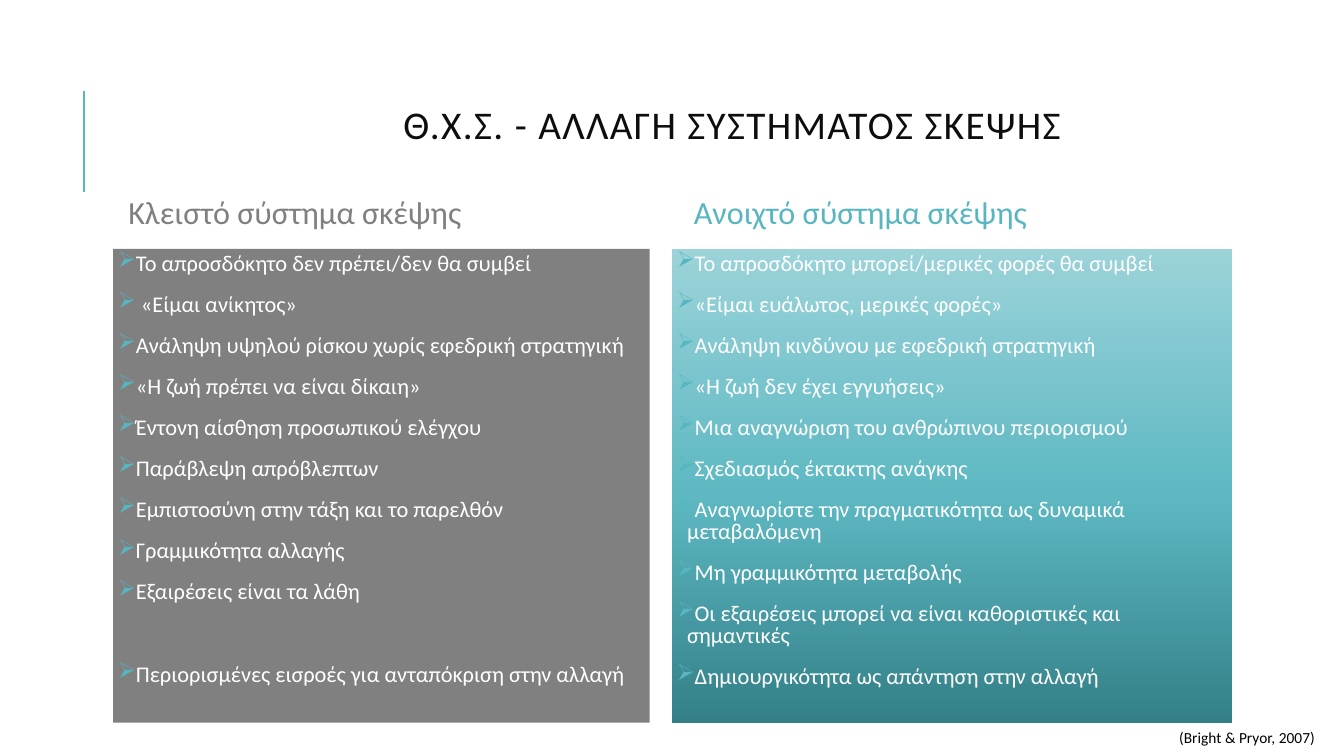
from copy import deepcopy
from lxml.etree import SubElement
from pptx import Presentation
from pptx.dml.color import RGBColor
from pptx.enum.shapes import MSO_CONNECTOR, MSO_SHAPE
from pptx.enum.text import MSO_ANCHOR as ANCHOR, PP_ALIGN as ALIGN
from pptx.oxml.ns import qn
from pptx.util import Inches, Pt

TEAL = RGBColor(0x58, 0xB6, 0xC0)
GREY = RGBColor(0x80, 0x80, 0x80)
WHITE = RGBColor(0xFF, 0xFF, 0xFF)
BLACK = RGBColor(0x00, 0x00, 0x00)
INK = RGBColor(0x0D, 0x0D, 0x0D)
DEEP_TEAL = RGBColor(0x33, 0x80, 0x88)
MID_TEAL = RGBColor(0x5D, 0xB8, 0xC2)
PALE_TEAL = RGBColor(0x9B, 0xD3, 0xD9)

deck = Presentation()
deck.slide_width, deck.slide_height = Inches(13.33), Inches(7.5)
COL, ROW = deck.slide_width / 120, deck.slide_height / 75
slide = deck.slides.add_slide(deck.slide_layouts[6])


def cells(left, top, width, height):
    return int(left * COL), int(top * ROW), int(width * COL), int(height * ROW)


def write(paragraph, text, size, color):
    run = paragraph.add_run()
    run.text = text
    run.font.name, run.font.size = "Calibri", Pt(size)
    run.font.color.rgb = color
    return run


accent = slide.shapes.add_connector(
    MSO_CONNECTOR.STRAIGHT, int(7.5 * COL), int(19 * ROW), int(7.5 * COL), int(9 * ROW))
accent.line.color.rgb, accent.line.width = TEAL, Pt(1.5)
SubElement(accent._element.spPr, qn("a:effectLst"))

title = slide.shapes.add_textbox(*cells(17.55, 9.2, 95.7, 7.1)).text_frame
title.word_wrap, title.vertical_anchor = True, ANCHOR.MIDDLE
title_line = title.paragraphs[0]
title_line.alignment, title_line.line_spacing = ALIGN.CENTER, 0.8
title_run = write(title_line, "Θ.Χ.Σ. - ΑΛΛΑΓΗ ΣΥΣΤΗΜΑΤΟΣ ΣΚΕΨΗΣ", 28, INK)
title_run.font._element.set("spc", "100")

closed_beliefs = [
    "Το απροσδόκητο δεν πρέπει/δεν θα συμβεί",
    " «Είμαι ανίκητος»",
    "Ανάληψη υψηλού ρίσκου χωρίς εφεδρική στρατηγική",
    "«Η ζωή πρέπει να είναι δίκαιη»",
    "Έντονη αίσθηση προσωπικού ελέγχου",
    "Παράβλεψη απρόβλεπτων",
    "Εμπιστοσύνη στην τάξη και το παρελθόν",
    "Γραμμικότητα αλλαγής",
    "Εξαιρέσεις είναι τα λάθη",
    "Περιορισμένες εισροές για ανταπόκριση στην αλλαγή",
]
open_beliefs = [
    "Το απροσδόκητο μπορεί/μερικές φορές θα συμβεί",
    "«Είμαι ευάλωτος, μερικές φορές»",
    "Ανάληψη κινδύνου με εφεδρική στρατηγική",
    "«Η ζωή δεν έχει εγγυήσεις»",
    "Μια αναγνώριση του ανθρώπινου περιορισμού",
    "Σχεδιασμός έκτακτης ανάγκης",
    "Αναγνωρίστε την πραγματικότητα ως δυναμικά μεταβαλόμενη",
    "Μη γραμμικότητα μεταβολής",
    "Οι εξαιρέσεις μπορεί να είναι καθοριστικές και σημαντικές",
    "Δημιουργικότητα ως απάντηση στην αλλαγή",
]
systems = [
    ("Κλειστό σύστημα σκέψης", GREY, 10.1, 10.1, 47.9, [GREY], closed_beliefs, 41.5),
    ("Ανοιχτό σύστημα σκέψης", TEAL, 60.6, 60, 50,
     [DEEP_TEAL, MID_TEAL, PALE_TEAL], open_beliefs, 12),
]

for name, name_color, name_left, left, width, shades, beliefs, last_gap in systems:
    heading = slide.shapes.add_textbox(*cells(name_left, 16.7, 46.8, 9)).text_frame
    heading.word_wrap, heading.vertical_anchor = True, ANCHOR.MIDDLE
    heading.margin_left = heading.margin_right = Inches(0.15)
    heading.paragraphs[0].line_spacing = 0.9
    write(heading.paragraphs[0], name, 23, name_color)

    panel = slide.shapes.add_shape(MSO_SHAPE.RECTANGLE, *cells(left, 24.7, width, 47))
    panel.shadow.inherit = False
    panel.line.fill.background()
    if len(shades) == 1:
        panel.fill.solid()
        panel.fill.fore_color.rgb = shades[0]
    else:
        panel.fill.gradient()
        panel.fill.gradient_angle = 90
        first_stop = panel._element.spPr.find(".//" + qn("a:gs"))
        first_stop.addnext(deepcopy(first_stop))
        for stop, shade, position in zip(panel.fill.gradient_stops, shades, (0, 0.48, 1)):
            stop.color.rgb, stop.position = shade, position

    body = panel.text_frame
    body.word_wrap, body.vertical_anchor = True, ANCHOR.TOP
    body.margin_left = body.margin_right = Inches(0.05)
    body.margin_top = body.margin_bottom = Inches(0.05)
    for number, belief in enumerate(beliefs):
        item = body.add_paragraph() if number else body.paragraphs[0]
        item.alignment, item.line_spacing = ALIGN.LEFT, 0.8
        item.space_after = Pt(2)
        if number:
            item.space_before = Pt(last_gap if belief == beliefs[-1] else 12)
        marks = item._element.get_or_add_pPr()
        marks.set("marL", str(Inches(0.1)))
        marks.set("indent", str(-Inches(0.1)))
        bullet_color = SubElement(marks, qn("a:buClr"))
        SubElement(bullet_color, qn("a:srgbClr"), val=str(TEAL))
        SubElement(marks, qn("a:buFont"), typeface="Wingdings 3")
        marks.remove(marks[-1])
        SubElement(marks, qn("a:buChar"), char="➢")
        write(item, belief, 16, WHITE)

citation = slide.shapes.add_textbox(*cells(104.4, 71.7, 15.6, 2.9)).text_frame
citation.word_wrap = True
write(citation.paragraphs[0], "(Bright & Pryor, 2007)", 11, BLACK)

deck.save("out.pptx")
